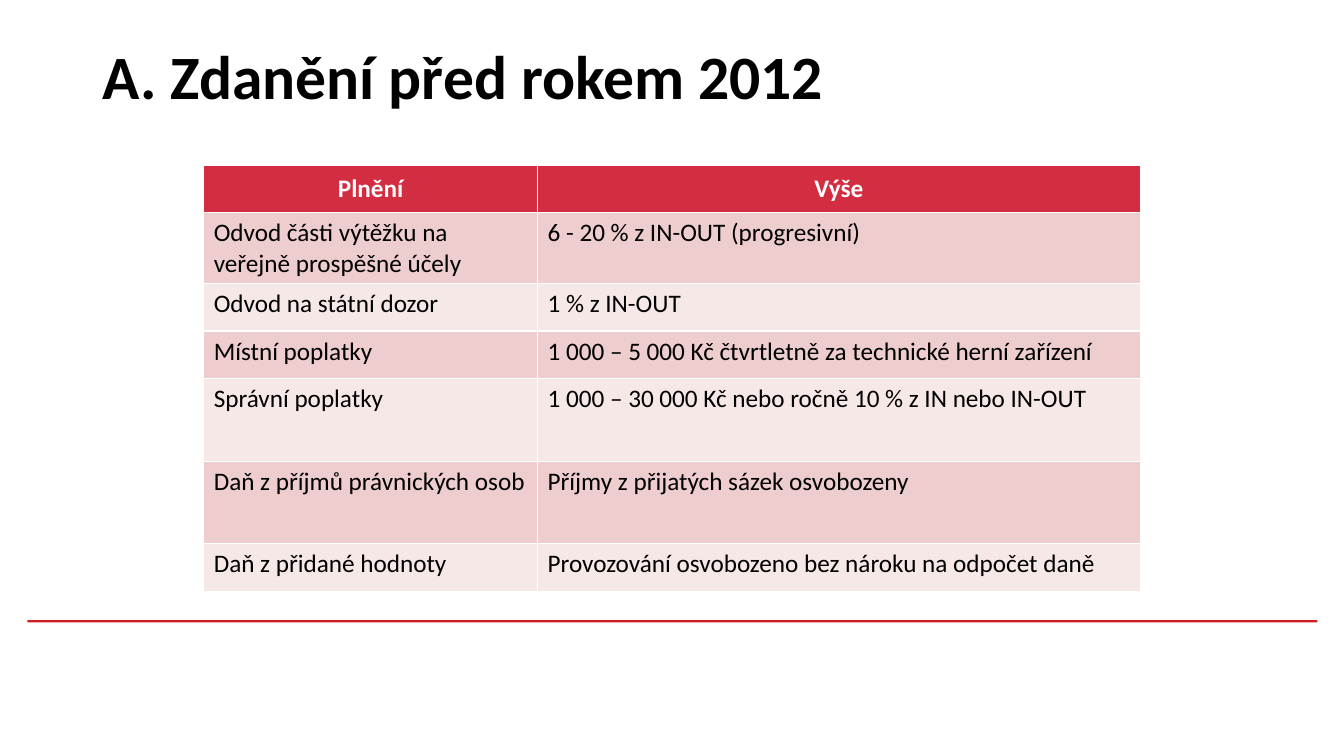
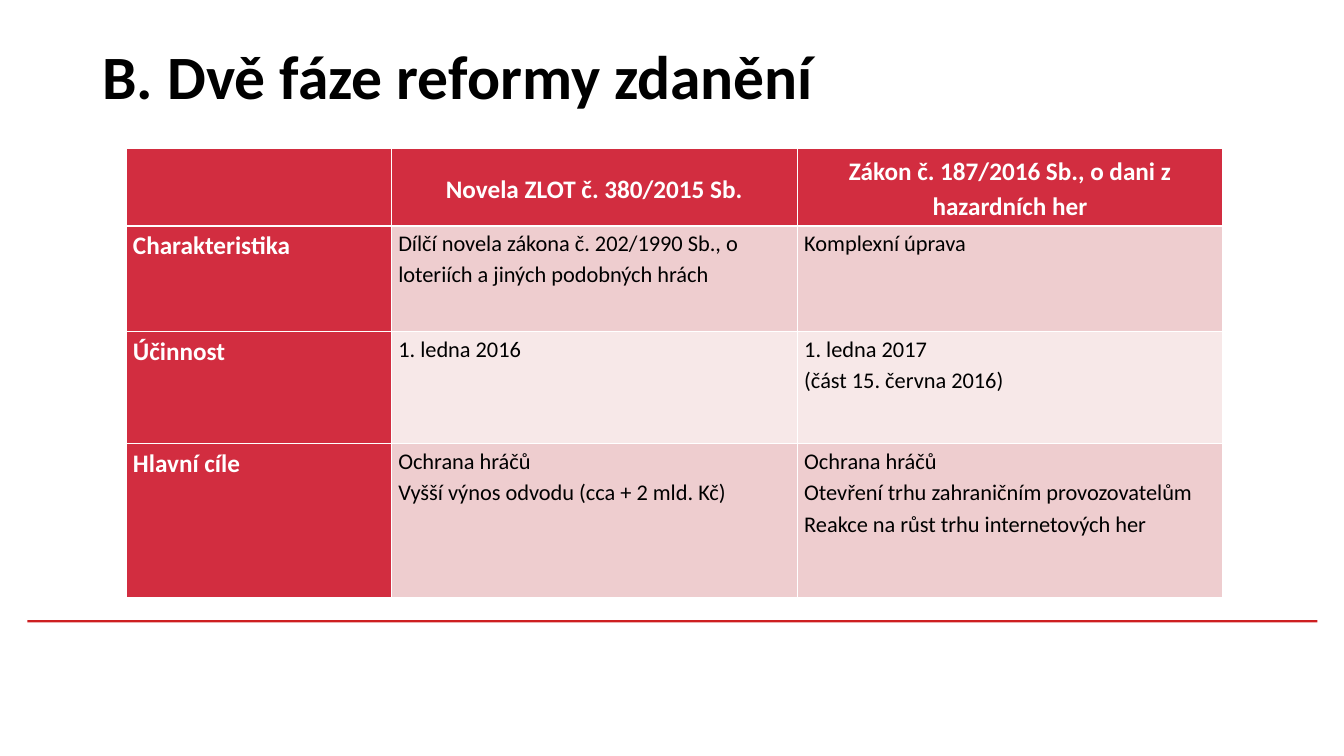
from pptx import Presentation as Deck
from pptx.dml.color import RGBColor as Rgb
from pptx.enum.shapes import MSO_SHAPE as Shape
from pptx.enum.text import MSO_ANCHOR as Anchor, MSO_AUTO_SIZE as Fit, PP_ALIGN as Align
from pptx.util import Pt

FONT = "Calibri"
RED, LINE, ROSE, PALE = "D22D40", "CD1F21", "EECDCF", "F7E8E8"
BLACK, WHITE, GREY = "000000", "FFFFFF", "8C8C8C"
WIDE, HIGH = 960, 540


def paint(item, tone):
    if hasattr(item, "solid"):
        item.solid()
        item = item.fore_color
    else:
        item = item.color
    item.rgb = Rgb.from_string(tone)


def write(frame, text, size, tone, bold=False, align=Align.LEFT, gap=None):
    for i, line in enumerate(text.split("\n")):
        para = frame.paragraphs[0] if i == 0 else frame.add_paragraph()
        para.alignment = align
        if gap:
            para.line_spacing = gap
        run = para.add_run()
        run.text = line
        run.font.name = FONT
        run.font.size = Pt(size)
        run.font.bold = bold
        paint(run.font, tone)


def place(shape, box):
    shape.left, shape.top, shape.width, shape.height = (Pt(n) for n in box)


def head(slide, text, box):
    title = slide.shapes.title
    place(title, box)
    frame = title.text_frame
    frame.word_wrap = True
    frame.auto_size = Fit.NONE
    frame.vertical_anchor = Anchor.MIDDLE
    write(frame, text, 44, BLACK, bold=True)


def foot(slide, page, box):
    x, y, w, h = box
    rule = slide.shapes.add_shape(Shape.RECTANGLE, Pt(x), Pt(y), Pt(w), Pt(1.5))
    rule.shadow.inherit = False
    paint(rule.fill, LINE)
    rule.line.fill.background()
    note = slide.shapes.add_textbox(Pt(x + w - 263), Pt(y + h - 39.5), Pt(216), Pt(29))
    frame = note.text_frame
    frame.word_wrap = True
    frame.vertical_anchor = Anchor.MIDDLE
    write(frame, str(page), 14, GREY, align=Align.RIGHT)


def grid(slide, rows, spot, cols, highs, pad, size, gap=None, side=False):
    x, y = spot
    part = slide.shapes.add_table(
        len(rows), len(cols), Pt(x), Pt(y), Pt(sum(cols)), Pt(sum(highs)))
    table = part.table
    table.horz_banding = False
    for col, width in zip(table.columns, cols):
        col.width = Pt(width)
    for row, high in zip(table.rows, highs):
        row.height = Pt(high)
    for r, texts in enumerate(rows):
        for c, text in enumerate(texts):
            cell = table.cell(r, c)
            top, label = r == 0, r == 0 or (side and c == 0)
            cell.margin_left = cell.margin_right = Pt(pad[0])
            cell.margin_top = cell.margin_bottom = Pt(pad[1])
            cell.vertical_anchor = Anchor.MIDDLE if top else Anchor.TOP
            paint(cell.fill, RED if label else (PALE, ROSE)[r % 2])
            if text:
                write(cell.text_frame, text, 18 if label else size,
                      WHITE if label else BLACK, label,
                      Align.CENTER if top else Align.LEFT, gap)


def page(deck, title, number, rows, **look):
    slide = deck.slides.add_slide(deck.slide_layouts[5])
    head(slide, title, (66, 1.5, 828, 104.5))
    foot(slide, number, (19.5, 443, 921.5, HIGH - 443 + 29))
    grid(slide, rows, **look)


TAXES = [
    ("Plnění", "Výše"),
    ("Odvod části výtěžku na veřejně prospěšné účely", "6 - 20 % z IN-OUT (progresivní)"),
    ("Odvod na státní dozor", "1 % z IN-OUT"),
    ("Místní poplatky", "1 000 – 5 000 Kč čtvrtletně za technické herní zařízení"),
    ("Správní poplatky", "1 000 – 30 000 Kč nebo ročně 10 % z IN nebo IN-OUT"),
    ("Daň z příjmů právnických osob", "Příjmy z přijatých sázek osvobozeny"),
    ("Daň z přidané hodnoty", "Provozování osvobozeno bez nároku na odpočet daně"),
]
STEPS = [
    ("", "Novela ZLOT č. 380/2015 Sb.", "Zákon č. 187/2016 Sb., o dani z hazardních her"),
    ("Charakteristika",
     "Dílčí novela zákona č. 202/1990 Sb., o loteriích a jiných podobných hrách",
     "Komplexní úprava"),
    ("Účinnost", "1. ledna 2016", "1. ledna 2017\n(část 15. června 2016)"),
    ("Hlavní cíle", "Ochrana hráčů\nVyšší výnos odvodu (cca + 2 mld. Kč)",
     "Ochrana hráčů\nOtevření trhu zahraničním provozovatelům\n"
     "Reakce na růst trhu internetových her"),
]


def main():
    deck = Deck()
    deck.slide_width, deck.slide_height = Pt(WIDE), Pt(HIGH)
    page(deck, "A. Zdanění před rokem 2012", 31, TAXES,
         spot=(145.5, 118), cols=(238.5, 430.5),
         highs=(34, 34, 34, 34, 59, 59, 34), pad=(7.2, 3.6), size=18)
    page(deck, "B. Dvě fáze reformy zdanění", 39, STEPS,
         spot=(90, 106), cols=(189.5, 290, 304),
         highs=(55.5, 75.5, 80, 110), pad=(5, 0), size=16, gap=1.15, side=True)
    deck.save("out.pptx")


if __name__ == "__main__":
    main()
